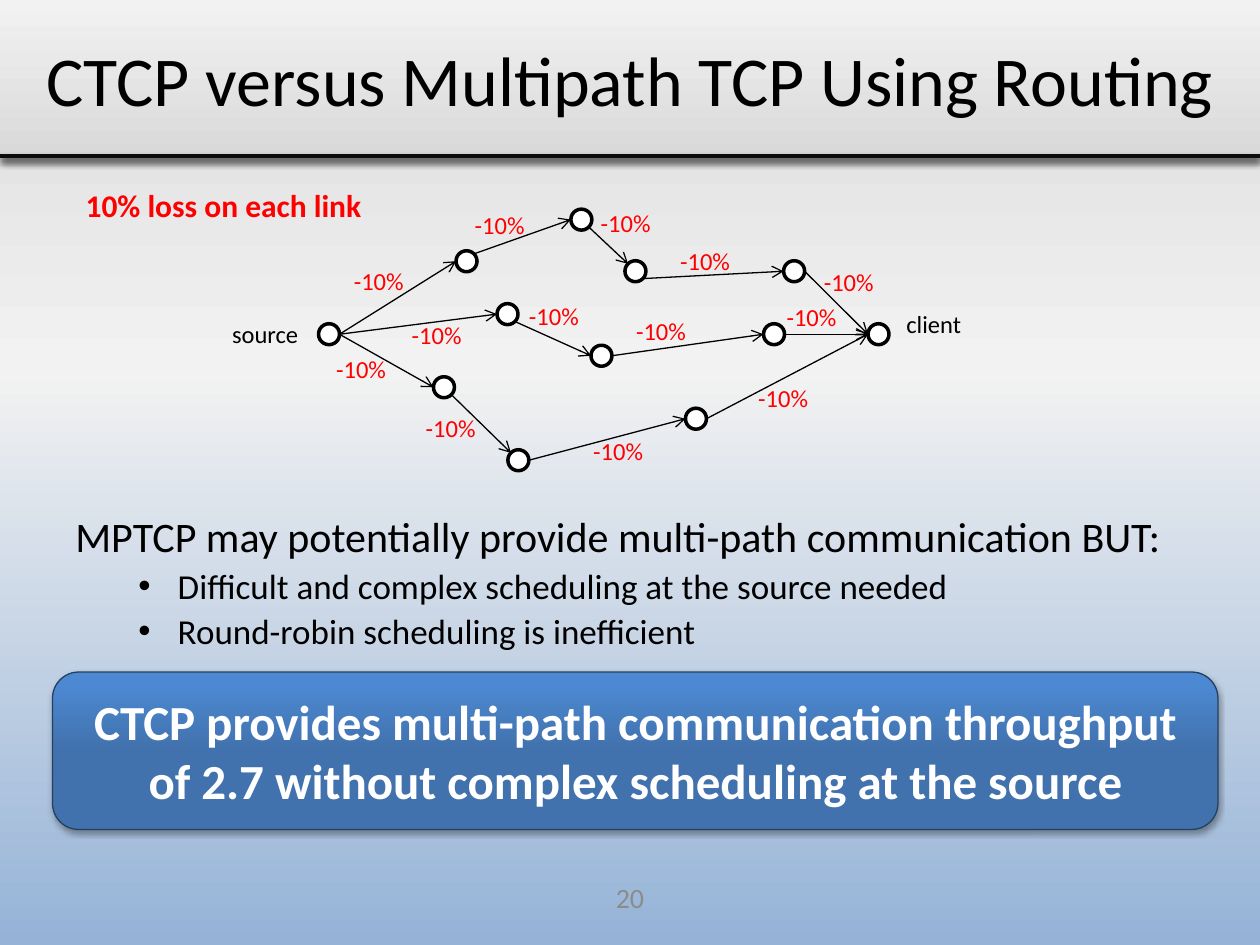
from lxml import etree
from pptx import Presentation
from pptx.dml.color import RGBColor
from pptx.enum import shapes as kinds, text as txt
from pptx.oxml import parse_xml
from pptx.oxml.ns import nsdecls, qn
from pptx.util import Pt

BLACK = RGBColor(0, 0, 0)
WHITE = RGBColor(255, 255, 255)
RED = RGBColor(255, 0, 0)
GREY = RGBColor(0x8C, 0x8C, 0x8C)
INK = RGBColor(0x0D, 0x0D, 0x0D)
NAVY = RGBColor(0x25, 0x40, 0x61)
SILVER = RGBColor(0xD9, 0xD9, 0xD9)
PALE = RGBColor(0xF2, 0xF2, 0xF2)
SKY = RGBColor(0x95, 0xB3, 0xD7)
BLUE = RGBColor(0x41, 0x72, 0xAD)
BRIGHT = RGBColor(0x4D, 0x89, 0xD3)

LEFT, CENTER = txt.PP_ALIGN.LEFT, txt.PP_ALIGN.CENTER
SHAPE = kinds.MSO_SHAPE
SIZE = 12  # node diameter
# Points on a node where links attach
SITES = {"L": (0, 6), "R": (12, 6), "TL": (1.8, 1.8), "TR": (10.2, 1.8), "BR": (10.2, 10.2)}
NODES = {
    "source": (0, 65.5), "client": (314, 65.5),
    "a1": (78.6, 23.8), "a2": (144.2, 0), "a3": (175.1, 29.5), "a4": (265.8, 29.5),
    "b1": (102, 54), "b2": (155.7, 77.8), "b3": (254.3, 65.5),
    "c1": (65.7, 95.8), "c2": (108.2, 137.5), "c3": (209.7, 113.8),
}
# From, site, to, site, label position
LINKS = [
    ("source", "R", "a1", "L", (13.1, 28.8)),
    ("a1", "TR", "a2", "L", (82.2, -2.9)),
    ("a2", "BR", "a3", "TL", (154.2, -4.3)),
    ("a3", "BR", "a4", "L", (199.6, 17.3)),
    ("a4", "R", "client", "L", (281.7, 29.5)),
    ("source", "R", "b1", "L", (46.2, 59.8)),
    ("b1", "BR", "b2", "L", (113.2, 49)),
    ("b2", "R", "b3", "L", (174.4, 57.6)),
    ("b3", "R", "client", "L", (260.4, 49.7)),
    ("source", "R", "c1", "L", (3, 79.2)),
    ("c1", "BR", "c2", "TL", (54.2, 113.1)),
    ("c2", "R", "c3", "L", (149.9, 126)),
    ("c3", "R", "client", "L", (244.2, 95.8)),
]


def style(par, size, color, align=LEFT, bold=False):
    par.alignment = align
    font = par.font
    font.name, font.size, font.bold = "Calibri", Pt(size), bold
    font.color.rgb = color


def label(slide, box, words, size, color, align=LEFT, bold=False, wrap=False):
    frame = slide.shapes.add_textbox(*map(Pt, box)).text_frame
    frame.word_wrap = wrap
    frame.text = words
    style(frame.paragraphs[0], size, color, align, bold)
    return frame


def shade(shape, stops):
    """Fill from bottom to top with (percent, colour) stops."""
    marks = "".join(f'<a:gs pos="{at * 1000}"><a:srgbClr val="{color}"/></a:gs>'
                    for at, color in stops)
    fill = parse_xml(f'<a:gradFill {nsdecls("a")} rotWithShape="1"><a:gsLst>{marks}</a:gsLst>'
                     '<a:lin ang="16200000" scaled="0"/></a:gradFill>')
    shape.element.spPr.find(qn("a:prstGeom")).addnext(fill)


def effect(shape, blur=None, dist=0, alpha=0):
    """Set a downward shadow, or none at all."""
    props = shape.element.spPr
    for old in props.findall(qn("a:effectLst")):
        props.remove(old)
    effects = etree.SubElement(props, qn("a:effectLst"))
    if blur:
        effects.append(parse_xml(
            f'<a:outerShdw {nsdecls("a")} blurRad="{Pt(blur)}" dist="{Pt(dist)}" '
            f'dir="5400000" rotWithShape="0"><a:srgbClr val="{BLACK}">'
            f'<a:alpha val="{alpha * 1000}"/></a:srgbClr></a:outerShdw>'))


def rule(slide, start, end, color, width):
    line = slide.shapes.add_connector(kinds.MSO_CONNECTOR.STRAIGHT, *map(Pt, (*start, *end)))
    line.line.color.rgb, line.line.width = color, Pt(width)
    effect(line)
    return line


def backdrop(slide, wide, high, head):
    for tall, stops in ((high, [(0, SKY), (61, PALE), (100, SILVER)]),
                        (head, [(0, SILVER), (100, PALE)])):
        panel = slide.shapes.add_shape(SHAPE.RECTANGLE, 0, 0, Pt(wide), Pt(tall))
        panel.line.fill.background()
        shade(panel, stops)
        effect(panel, 4, 3, 40)
    effect(rule(slide, (0, head - 0.7), (wide, head - 0.7), INK, 2), 3.1, 1.6, 38)


def heading(slide, wide, high, words):
    title = slide.shapes.title
    title.left, title.top, title.width, title.height = 0, 0, Pt(wide), Pt(high)
    frame = title.text_frame
    frame.text, frame.vertical_anchor = words, txt.MSO_ANCHOR.MIDDLE
    style(frame.paragraphs[0], 40, BLACK, CENTER)
    title.element.getparent().append(title.element)  # in front of the backdrop


def network(slide, x, y):
    for left, top in NODES.values():
        node = slide.shapes.add_shape(SHAPE.OVAL, Pt(x + left), Pt(y + top), Pt(SIZE), Pt(SIZE))
        node.shadow.inherit = False
        node.fill.solid()
        node.fill.fore_color.rgb = WHITE
        node.line.color.rgb, node.line.width = BLACK, Pt(2)

    def site(name, side):
        (left, top), (dx, dy) = NODES[name], SITES[side]
        return x + left + dx, y + top + dy

    for start, out, end, into, (left, top) in LINKS:
        link = rule(slide, site(start, out), site(end, into), BLACK, 0.75)
        etree.SubElement(link.line._get_or_add_ln(), qn("a:tailEnd"), type="arrow")
        label(slide, (x + left, y + top, 43.2, 24.5), "-10%", 14, RED)
    label(slide, (x - 59, y + 59, 57, 24.5), "source", 14, BLACK, CENTER)
    label(slide, (x + 327.8, y + 53.3, 47.5, 24.5), "client", 14, BLACK, CENTER)


def points(slide, box, lead, items):
    frame = label(slide, box, lead, 24, BLACK, wrap=True)
    for item in items:
        par = frame.add_paragraph()
        par.text, par.level, par.space_before = item, 1, Pt(2)
        props = par._p.get_or_add_pPr()
        props.set("marL", str(Pt(58.5)))
        props.set("indent", str(Pt(-22.5)))
        etree.SubElement(props, qn("a:buFont"), typeface="Arial")
        etree.SubElement(props, qn("a:buChar"), char="•")
        style(par, 20, BLACK)


def banner(slide, box, words):
    shape = slide.shapes.add_shape(SHAPE.ROUNDED_RECTANGLE, *map(Pt, box))
    shade(shape, [(51, BLUE), (93, BRIGHT)])
    shape.line.color.rgb, shape.line.width = NAVY, Pt(0.75)
    effect(shape, 3.1, 1.8, 35)
    frame = shape.text_frame
    frame.text, frame.vertical_anchor = words, txt.MSO_ANCHOR.MIDDLE
    style(frame.paragraphs[0], 28, WHITE, CENTER, True)


def main():
    deck = Presentation()
    deck.slide_width, deck.slide_height = Pt(720), Pt(540)
    slide = deck.slides.add_slide(deck.slide_layouts[5])
    backdrop(slide, 720, 540, 90)
    heading(slide, 720, 90, "CTCP versus Multipath TCP Using Routing")
    points(slide, (36, 288, 643, 121.5),
           "MPTCP may potentially provide multi-path communication BUT:",
           ["Difficult and complex scheduling at the source needed",
            "Round-robin scheduling is inefficient"])
    network(slide, 182, 119.5)
    label(slide, (41.8, 103, 173.5, 29), "10% loss on each link", 18, RED, bold=True)
    banner(slide, (30, 384, 666, 90), "CTCP provides multi-path communication throughput "
           "of 2.7 without complex scheduling at the source")
    page = label(slide, (276, 498.5, 168, 28.8), "20", 16, GREY, CENTER, wrap=True)
    page.vertical_anchor = txt.MSO_ANCHOR.MIDDLE
    deck.save("out.pptx")


if __name__ == "__main__":
    main()
